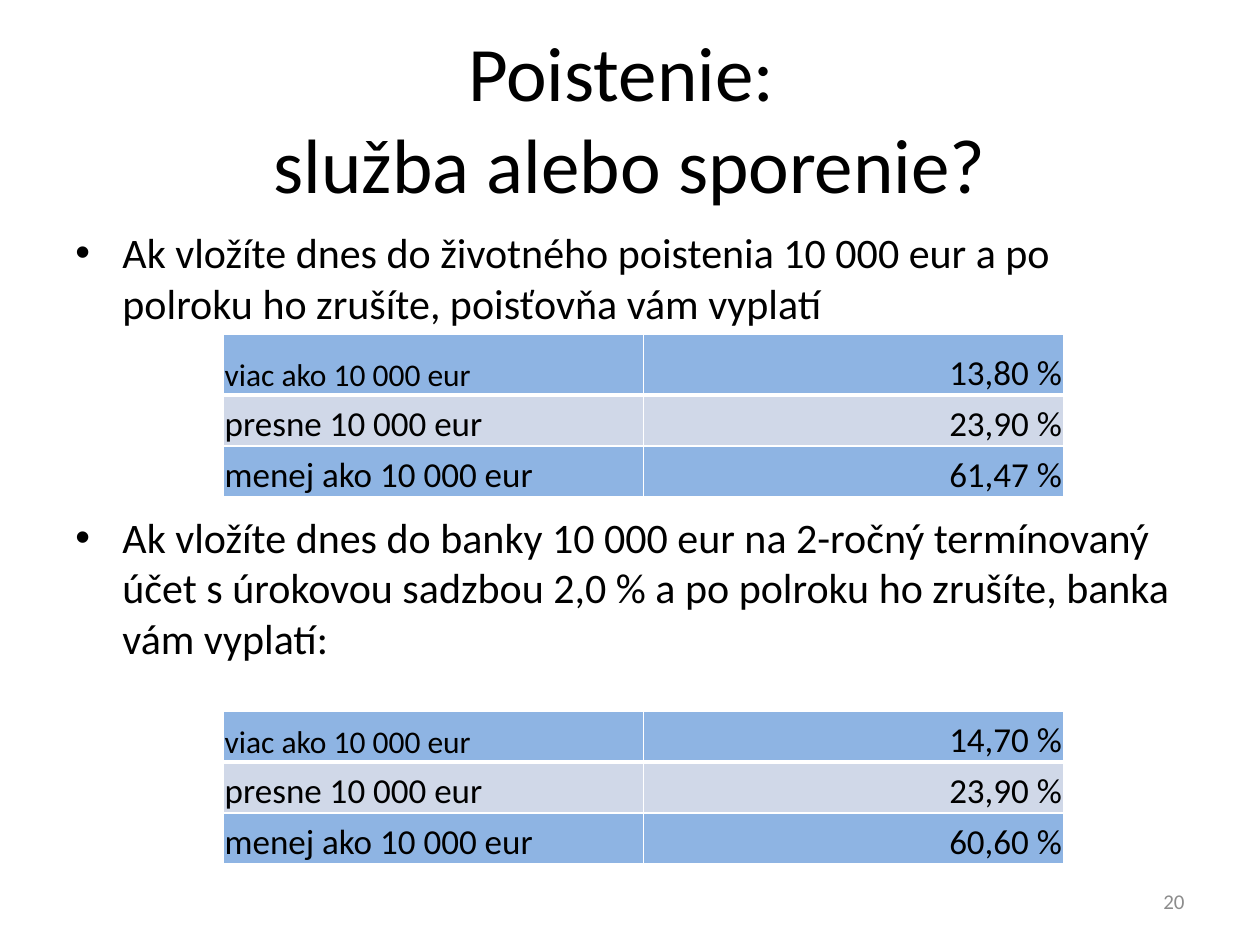
from lxml.etree import SubElement
from pptx import Presentation
from pptx.dml.color import RGBColor
from pptx.enum.text import MSO_ANCHOR as Anchor, MSO_AUTO_SIZE as AutoSize, PP_ALIGN as Align
from pptx.oxml.ns import qn
from pptx.util import Cm, Pt

# Content
TITLE = "Poistenie: \vslužba alebo sporenie?"
QUESTIONS = [
    "Ak vložíte dnes do životného poistenia 10\u00a0000 eur a\u00a0po polroku ho zrušíte, "
    "poisťovňa vám vyplatí",
    "Ak vložíte dnes do banky 10\u00a0000 eur na 2-ročný termínovaný účet s\u00a0úrokovou "
    "sadzbou 2,0 % a\u00a0po polroku ho zrušíte, banka vám vyplatí:",
]
ANSWERS = ["viac ako 10\u00a0000 eur", "presne 10\u00a0000 eur", "menej ako 10\u00a0000 eur"]
# Top and first row height in cm, then the share of each answer
RESULTS = [
    (6.73, 1.23, ["13,80 %", "23,90 %", "61,47 %"]),
    (14.33, 1.03, ["14,70 %", "23,90 %", "60,60 %"]),
]
PAGE_NUMBER = "20"

# Look
FONT = "Calibri"
BLACK = RGBColor(0x00, 0x00, 0x00)
GREY = RGBColor(0x8C, 0x8C, 0x8C)
BLUE = RGBColor(0x8E, 0xB4, 0xE3)
PALE = RGBColor(0xD0, 0xD8, 0xE8)
WHITE = RGBColor(0xFF, 0xFF, 0xFF)
MARGIN = 1.27
CONTENT_WIDTH = 22.86
TABLE_LEFT, COLUMN_WIDTH, ROW_HEIGHT = 4.5, 8.47, 1.03
QUESTION_GAP = 105  # points between the questions, room for the first table


def write(paragraph, text, size, color=BLACK, align=Align.LEFT, before=0, bullet=False):
    paragraph.text = text
    paragraph.alignment = align
    paragraph.space_before = Pt(before)
    if bullet:
        properties = paragraph._p.get_or_add_pPr()
        properties.set("marL", str(Cm(0.95)))
        properties.set("indent", str(-Cm(0.95)))
        SubElement(properties, qn("a:buFont"), typeface="Arial")
        SubElement(properties, qn("a:buChar"), char="•")
    for run in paragraph.runs:
        run.font.name = FONT
        run.font.size = Pt(size)
        run.font.bold = False
        run.font.color.rgb = color


def draw_borders(cell, top, bottom):
    properties = cell._tc.get_or_add_tcPr()
    for side, width in (("L", 1), ("R", 1), ("T", top), ("B", bottom)):
        line = SubElement(properties, qn(f"a:ln{side}"), w=str(Pt(width)))
        fill = SubElement(line, qn("a:solidFill"))
        SubElement(fill, qn("a:srgbClr"), val=str(WHITE))


def add_results(slide, top, first_height, shares):
    table = slide.shapes.add_table(
        len(ANSWERS), 2, Cm(TABLE_LEFT), Cm(top), Cm(2 * COLUMN_WIDTH),
        Cm(first_height + 2 * ROW_HEIGHT)).table
    table.first_row = table.horz_banding = False
    for column in table.columns:
        column.width = Cm(COLUMN_WIDTH)
    for row, (answer, share) in enumerate(zip(ANSWERS, shares)):
        table.rows[row].height = Cm(ROW_HEIGHT if row else first_height)
        answer_size = 20 if row else 18
        parts = [(answer, answer_size, Align.LEFT), (share, 20, Align.RIGHT)]
        for column, (text, size, align) in enumerate(parts):
            cell = table.cell(row, column)
            draw_borders(cell, top=3 if row == 1 else 1, bottom=3 if row == 0 else 1)
            cell.fill.solid()
            cell.fill.fore_color.rgb = PALE if row % 2 else BLUE
            cell.vertical_anchor = Anchor.BOTTOM
            cell.margin_left = cell.margin_right = cell.margin_top = Cm(0.03)
            cell.margin_bottom = 0
            write(cell.text_frame.paragraphs[0], text, size, align=align)


def main():
    deck = Presentation()
    deck.slide_width, deck.slide_height = Cm(25.4), Cm(19.05)
    slide = deck.slides.add_slide(deck.slide_layouts[5])

    # Title
    title = slide.shapes.title
    title.left, title.top = Cm(MARGIN), Cm(0.76)
    title.width, title.height = Cm(CONTENT_WIDTH), Cm(3.18)
    title.text_frame.auto_size = AutoSize.NONE
    title.text_frame.vertical_anchor = Anchor.MIDDLE
    write(title.text_frame.paragraphs[0], TITLE, 44, align=Align.CENTER)

    # Questions
    questions = slide.shapes.add_textbox(
        Cm(MARGIN), Cm(4.45), Cm(CONTENT_WIDTH), Cm(12.57)).text_frame
    questions.word_wrap = True
    for index, question in enumerate(QUESTIONS):
        paragraph = questions.add_paragraph() if index else questions.paragraphs[0]
        write(paragraph, question, 24, before=index * QUESTION_GAP, bullet=True)

    # Answer tables
    for top, first_height, shares in RESULTS:
        add_results(slide, top, first_height, shares)

    # Page number
    page_number = slide.shapes.add_textbox(
        Cm(18.2), Cm(17.66), Cm(5.93), Cm(1.01)).text_frame
    page_number.word_wrap = True
    page_number.vertical_anchor = Anchor.MIDDLE
    write(page_number.paragraphs[0], PAGE_NUMBER, 12, color=GREY, align=Align.RIGHT)

    deck.save("out.pptx")


if __name__ == "__main__":
    main()
